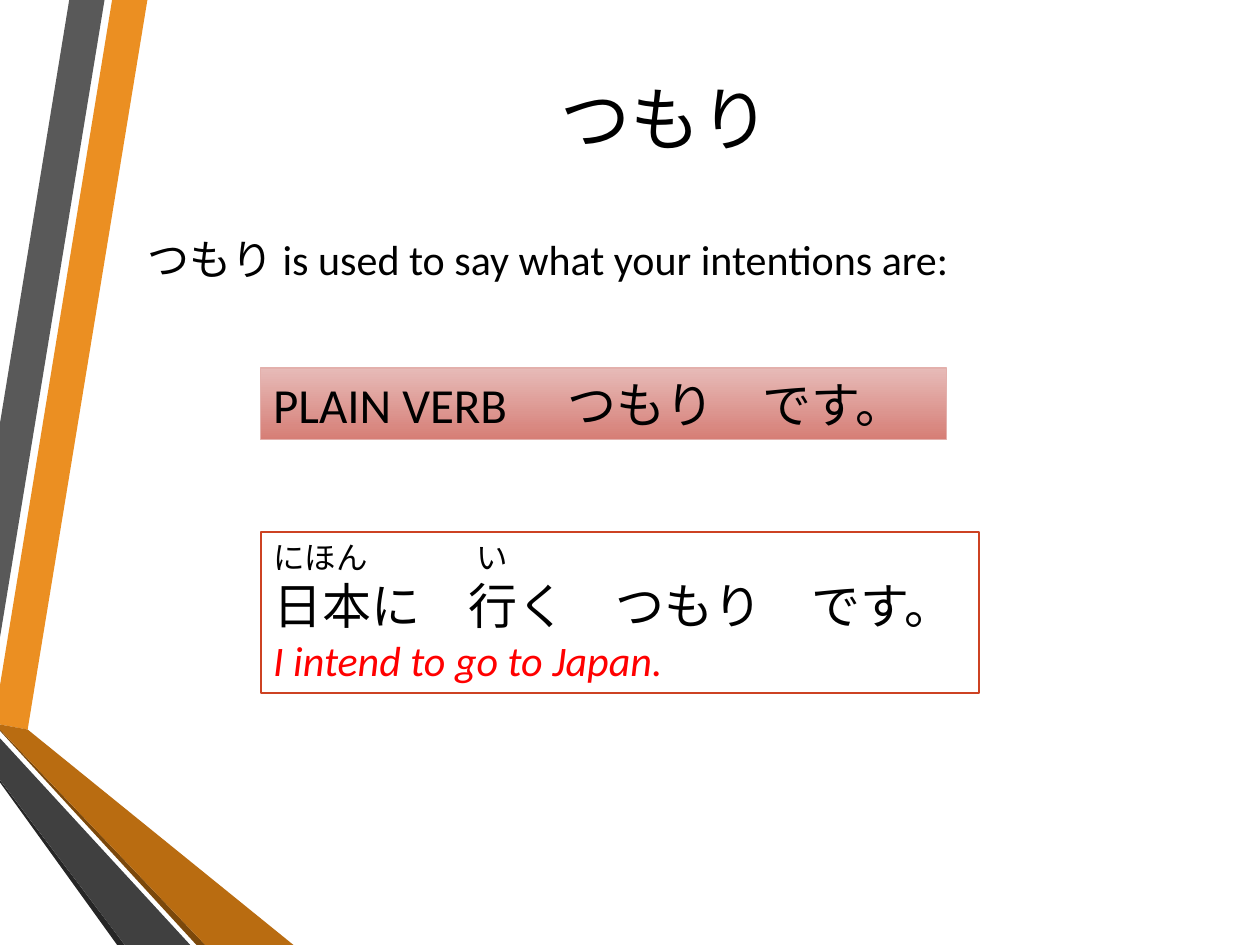
from typing import NamedTuple

from pptx import Presentation
from pptx.dml.color import RGBColor
from pptx.enum.shapes import MSO_SHAPE
from pptx.enum.text import MSO_ANCHOR, MSO_AUTO_SIZE, PP_ALIGN
from pptx.oxml.ns import qn
from pptx.util import Inches, Pt
from lxml import etree

RECT = MSO_SHAPE.RECTANGLE
MIDDLE, TOP = MSO_ANCHOR.MIDDLE, MSO_ANCHOR.TOP
LEFT, CENTER = PP_ALIGN.LEFT, PP_ALIGN.CENTER
NO_FIT = MSO_AUTO_SIZE.NONE

COLUMNS, ROWS = 100, 75
CELL = Inches(0.1)
FONT = "Calibri"
TITLE_ONLY = 5


class Area(NamedTuple):
    col: float
    row: float
    cols: float
    rows: float


class Band(NamedTuple):
    color: str
    points: list[tuple[float, float]]


class Line(NamedTuple):
    text: str
    size: int
    color: str = "000000"
    italic: bool = False
    tab: float = 0


class Box(NamedTuple):
    area: Area
    fills: list[str]
    border: str
    border_width: float
    lines: list[Line]


BANDS = [
    Band("EB8F22", [(0, 54.4), (0, 57.5), (2.2, 57.9), (11.7, 0), (8.9, 0)]),
    Band("595959", [(8.3, 0), (5.5, 0), (0, 33.6), (0, 50.6)]),
    Band("262626", [(0, 61.9), (0, 62.1), (9.3, ROWS), (9.9, ROWS)]),
    Band("7B480B", [(0, 57.9), (0, 58), (15.6, ROWS), (16.3, ROWS)]),
    Band("B96C11", [(0, 57.9), (16.3, ROWS), (23.3, ROWS), (2.2, 57.9), (0, 57.5)]),
    Band("404040", [(0, 61.9), (9.9, ROWS), (15.1, ROWS), (0, 58.6)]),
]

TITLE = Area(10.7, 5, 84.3, 8.6)
INTRO = Area(10.7, 16.7, 84.3, 7.7)

BOXES = [
    Box(Area(20.7, 29.2, 54.4, 5.7), ["E7BBB8", "D67E76"], "E3B0AC", 0.75,
        [Line("PLAIN VERB 　つもり　です。", 28)]),
    Box(Area(20.7, 42.2, 57, 12.8), ["FFFFFF"], "CD4223", 1.25,
        [Line("にほん\tい", 18, tab=16.1),
         Line("日本に　行く　つもり　です。", 28),
         Line("I intend to go to Japan.", 24, "FF0000", True)]),
]


def cells(n: float) -> int:
    return round(n * CELL)


def place(area: Area) -> list[int]:
    return [cells(n) for n in area]


def rgb(color: str) -> RGBColor:
    return RGBColor.from_string(color)


def write(tf, lines: list[Line], align=LEFT, anchor=TOP) -> None:
    tf.word_wrap = True
    tf.auto_size = NO_FIT
    tf.vertical_anchor = anchor
    for i, line in enumerate(lines):
        p = tf.add_paragraph() if i else tf.paragraphs[0]
        p.add_run().text = line.text
        p.alignment = align
        p.font.name = FONT
        p.font.size = Pt(line.size)
        p.font.italic = line.italic
        p.font.color.rgb = rgb(line.color)
        if line.tab:
            tabs = etree.Element(qn("a:tabLst"))
            etree.SubElement(tabs, qn("a:tab"), pos=str(cells(line.tab)), algn="l")
            p._p.get_or_add_pPr().insert(0, tabs)


def draw_band(s, band: Band) -> None:
    start, *rest = [(cells(x), cells(y)) for x, y in band.points]
    builder = s.shapes.build_freeform(*start)
    builder.add_line_segments(rest, close=True)
    sp = builder.convert_to_shape()
    sp.shadow.inherit = False
    sp.fill.solid()
    sp.fill.fore_color.rgb = rgb(band.color)
    sp.line.fill.background()


def draw_box(s, box: Box) -> None:
    sp = s.shapes.add_shape(RECT, *place(box.area))
    sp.shadow.inherit = False
    if len(box.fills) > 1:
        sp.fill.gradient()
        sp.fill.gradient_angle = 270
        for stop, color in zip(sp.fill.gradient_stops, box.fills):
            stop.color.rgb = rgb(color)
    else:
        sp.fill.solid()
        sp.fill.fore_color.rgb = rgb(box.fills[0])
    sp.line.color.rgb = rgb(box.border)
    sp.line.width = Pt(box.border_width)
    write(sp.text_frame, box.lines)


def main() -> None:
    prs = Presentation()
    prs.slide_width, prs.slide_height = cells(COLUMNS), cells(ROWS)
    s = prs.slides.add_slide(prs.slide_layouts[TITLE_ONLY])
    for band in BANDS:
        draw_band(s, band)

    title = s.shapes.title
    title.left, title.top, title.width, title.height = place(TITLE)
    write(title.text_frame, [Line("つもり", 40)], CENTER, MIDDLE)

    tf = s.shapes.add_textbox(*place(INTRO)).text_frame
    write(tf, [Line("つもり is used to say what your intentions are:", 24)], anchor=MIDDLE)
    tf.paragraphs[0].space_before = Pt(5)
    tf.paragraphs[0].space_after = Pt(6)

    for box in BOXES:
        draw_box(s, box)
    prs.save("out.pptx")


if __name__ == "__main__":
    main()
